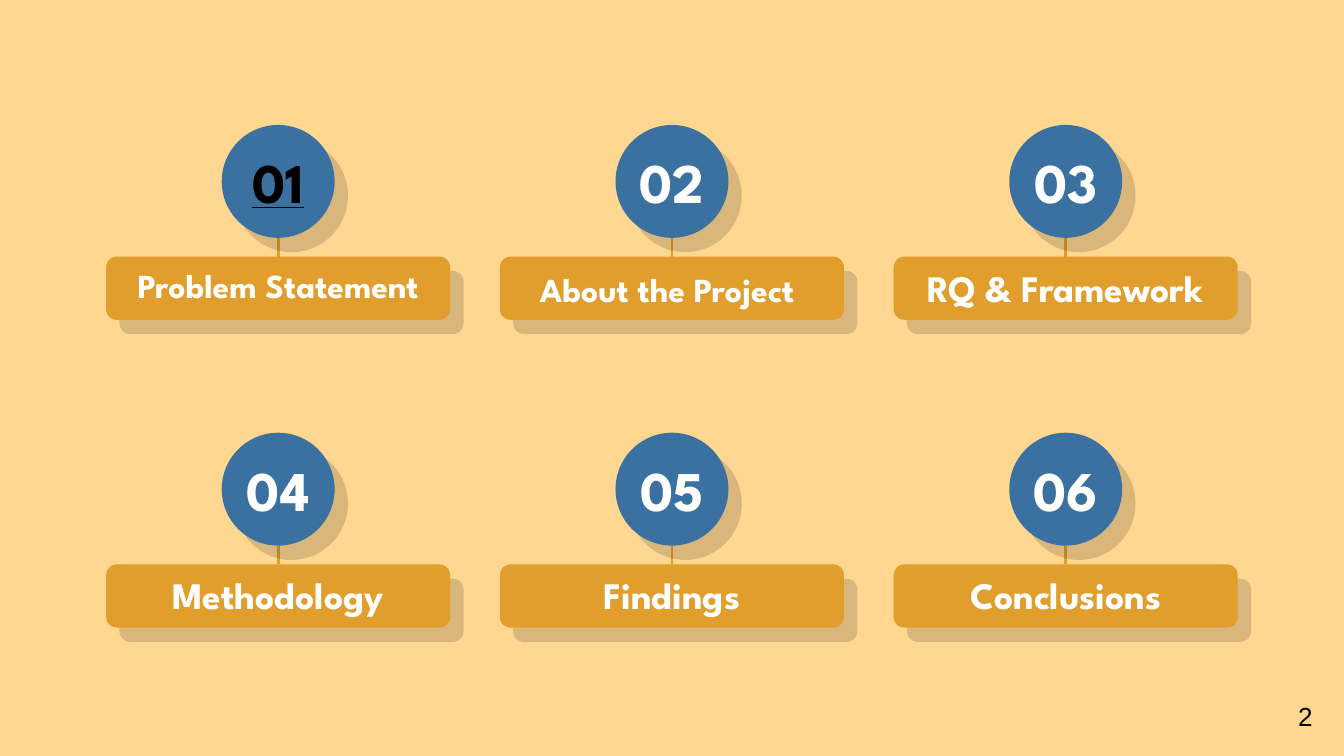
from dataclasses import dataclass

from lxml.etree import SubElement
from pptx import Presentation
from pptx.dml.color import RGBColor
from pptx.enum.shapes import MSO_CONNECTOR, MSO_SHAPE
from pptx.enum.text import MSO_ANCHOR, PP_ALIGN
from pptx.oxml.ns import qn
from pptx.shapes.autoshape import Shape
from pptx.slide import Slide
from pptx.util import Inches, Pt


@dataclass(frozen=True)
class Theme:
    background: str = "FFD791"
    bar: str = "E19E2C"
    circle: str = "3A71A1"
    light: str = "FFFFFF"
    dark: str = "000000"
    heading_font: str = "League Spartan"
    body_font: str = "Arial"
    number_size: int = 30
    label_size: int = 20
    small_label_size: int = 18
    page_size: int = 14


THEME = Theme()


@dataclass(frozen=True)
class Topic:
    title: str
    size: int = THEME.label_size
    number_color: str = THEME.light
    underline: bool = False
    tail: str = ""


TOPICS = [
    Topic("Problem Statement", THEME.small_label_size, THEME.dark, underline=True),
    Topic("About the Project", THEME.small_label_size, tail=" "),
    Topic("RQ & Framework"),
    Topic("Methodology"),
    Topic("Findings"),
    Topic("Conclusions"),
]

SLIDE_W = 10
SLIDE_H = SLIDE_W * 9 / 16
COLUMNS = 3
LEFT, TOP = 0.79, 1.91
PITCH_X, PITCH_Y = 2.93, 2.29
BAR_W, BAR_H = 2.56, 0.47
LABEL_RISE, LABEL_H = 0.04, 0.54
CIRCLE_RISE, CIRCLE_D = 0.98, 0.84
NUMBER_W, NUMBER_H = 1.14, 0.65


def add_text(s: Slide, text: str, x: float, y: float, w: float, h: float, *,
             size: int, color: str, font: str = THEME.heading_font,
             bold: bool = True, underline: bool = False,
             align: PP_ALIGN = PP_ALIGN.CENTER,
             anchor: MSO_ANCHOR = MSO_ANCHOR.TOP,
             tail: str = "", tail_size: int = THEME.label_size) -> None:
    """Add a text box; tail is a closing run with its own size."""
    tf = s.shapes.add_textbox(Inches(x), Inches(y), Inches(w), Inches(h)).text_frame
    tf.word_wrap = True
    tf.vertical_anchor = anchor
    tf.margin_left = tf.margin_right = Inches(0.1)
    tf.margin_top = tf.margin_bottom = Inches(0.1)
    p = tf.paragraphs[0]
    p.alignment = align
    for part, points in ((text, size), (tail, tail_size)):
        if part:
            r = p.add_run()
            r.text = part
            r.font.name = font
            r.font.size = Pt(points)
            r.font.bold = bold
            if underline:
                r.font.underline = True
            r.font.color.rgb = RGBColor.from_string(color)


def add_shadowed(s: Slide, kind: MSO_SHAPE, x: float, y: float,
                 w: float, h: float, fill: str) -> Shape:
    """Add a borderless shape with a hard shadow to its lower right."""
    sp = s.shapes.add_shape(kind, Inches(x), Inches(y), Inches(w), Inches(h))
    sp.fill.solid()
    sp.fill.fore_color.rgb = RGBColor.from_string(fill)
    sp.line.fill.background()
    sp.shadow.inherit = False
    effects = sp._element.spPr.find(qn("a:effectLst"))
    shadow = SubElement(effects, qn("a:outerShdw"), blurRad="0", dist=str(Pt(10.5)),
                        dir=str(47 * 60000), algn="bl", rotWithShape="0")
    color = SubElement(shadow, qn("a:srgbClr"), val=THEME.dark)
    SubElement(color, qn("a:alpha"), val="14000")
    return sp


def add_stem(s: Slide, x: float, top: float, bottom: float) -> None:
    line = s.shapes.add_connector(MSO_CONNECTOR.STRAIGHT, Inches(x), Inches(top),
                                  Inches(x), Inches(bottom))
    line.line.color.rgb = RGBColor.from_string(THEME.bar)
    line.line.width = Pt(1.5)
    SubElement(line._element.spPr, qn("a:effectLst"))


def add_topic(s: Slide, index: int, topic: Topic) -> None:
    row, col = divmod(index, COLUMNS)
    x, y = LEFT + col * PITCH_X, TOP + row * PITCH_Y
    center = x + BAR_W / 2
    circle_top = y - CIRCLE_RISE
    number_top = circle_top + (CIRCLE_D - NUMBER_H) / 2

    bar = add_shadowed(s, MSO_SHAPE.ROUNDED_RECTANGLE, x, y, BAR_W, BAR_H, THEME.bar)
    bar.adjustments[0] = 0.17
    add_text(s, topic.title, x, y - LABEL_RISE, BAR_W, LABEL_H,
             size=topic.size, color=THEME.light, tail=topic.tail)
    add_stem(s, center, circle_top + CIRCLE_D, y)
    add_shadowed(s, MSO_SHAPE.OVAL, center - CIRCLE_D / 2, circle_top,
                 CIRCLE_D, CIRCLE_D, THEME.circle)
    add_text(s, f"{index + 1:02}", center - NUMBER_W / 2, number_top,
             NUMBER_W, NUMBER_H, size=THEME.number_size, color=topic.number_color,
             underline=topic.underline, anchor=MSO_ANCHOR.MIDDLE)


def main() -> None:
    prs = Presentation()
    prs.slide_width, prs.slide_height = Inches(SLIDE_W), Inches(SLIDE_H)
    s = prs.slides.add_slide(prs.slide_layouts[6])
    s.background.fill.solid()
    s.background.fill.fore_color.rgb = RGBColor.from_string(THEME.background)
    for index, topic in enumerate(TOPICS):
        add_topic(s, index, topic)
    add_text(s, "2", 9.56, 5.11, 0.35, 0.44, size=THEME.page_size, color=THEME.dark,
             font=THEME.body_font, bold=False, align=PP_ALIGN.LEFT)
    prs.save("out.pptx")


if __name__ == "__main__":
    main()
